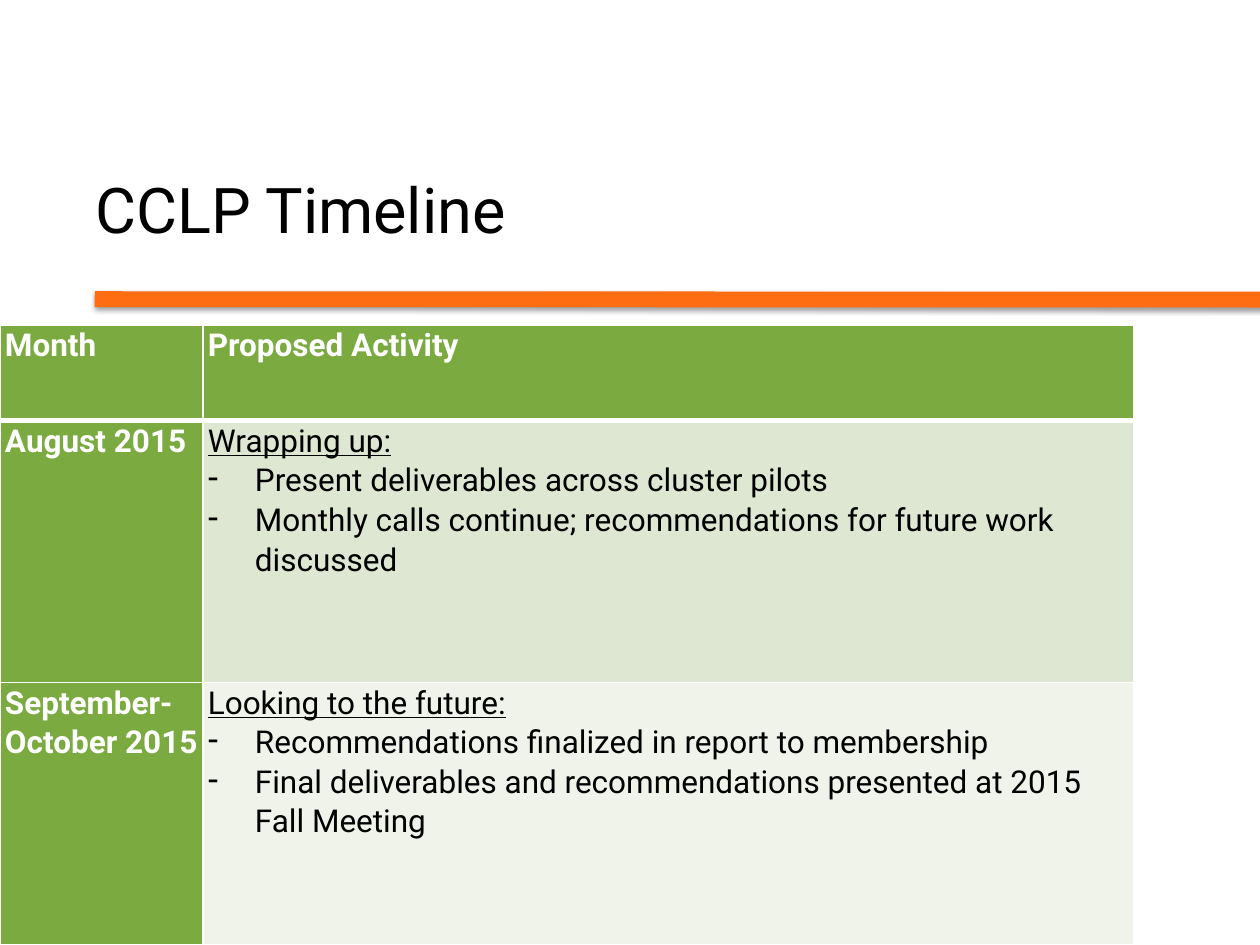
import pptx
import pptx.util
import pptx.dml.color
import pptx.enum.shapes
import pptx.enum.text
import pptx.oxml
import pptx.oxml.ns

Cm = pptx.util.Cm
Pt = pptx.util.Pt
NAMESPACE = pptx.oxml.ns.nsdecls("a")
GREEN, WHITE, BLACK, ORANGE = "7AAA40", "FFFFFF", "000000", "FF6D13"


def color(value):
    return pptx.dml.color.RGBColor.from_string(value)


def write_span(para, text, hex_color, **formats):
    span = para.add_run()
    span.text = text
    span.font.color.rgb = color(hex_color)
    for name, value in {"name": "Roboto", **formats}.items():
        setattr(span.font, name, value)


deck = pptx.Presentation()
deck.slide_width, deck.slide_height = Cm(25.4), Cm(19.05)
page = deck.slides.add_slide(deck.slide_layouts[6])

# Orange rule with a soft shadow
rule = page.shapes.add_connector(
    pptx.enum.shapes.MSO_CONNECTOR.STRAIGHT, Cm(1.91), Cm(6.03), Cm(25.65), Cm(6.04))
rule.line.color.rgb = color(ORANGE)
rule.line.width = Pt(9)
rule._element.spPr.append(pptx.oxml.parse_xml(
    f'<a:effectLst {NAMESPACE}><a:outerShdw blurRad="{Pt(3.1)}" dist="{Pt(1.6)}" '
    f'dir="5400000" rotWithShape="0"><a:srgbClr val="{BLACK}"><a:alpha val="38000"/>'
    '</a:srgbClr></a:outerShdw></a:effectLst>'))

# Title
title = page.shapes.add_textbox(Cm(1.68), Cm(2.67), Cm(17.09), Cm(3.18)).text_frame
title.word_wrap = True
title.vertical_anchor = pptx.enum.text.MSO_ANCHOR.MIDDLE
title.paragraphs[0].line_spacing = Pt(40)
write_span(title.paragraphs[0], "CCLP Timeline", BLACK, size=Pt(36))

# Timeline: month, activity heading, activity bullets, activity fill
timeline = [
    ("Month", "Proposed Activity", [], GREEN),
    ("August 2015", "Wrapping up:",
     ["Present deliverables across cluster pilots",
      "Monthly calls continue; recommendations for future work discussed"], "DEE7D1"),
    ("September-October 2015", "Looking to the future:",
     ["Recommendations finalized in report to membership",
      "Final deliverables and recommendations presented at 2015 Fall Meeting"], "EFF3EA"),
]
table = page.shapes.add_table(3, 2, Cm(0), Cm(6.55), Cm(22.86), Cm(12.5)).table
for column, width in zip(table.columns, (4.09, 18.77)):
    column.width = Cm(width)
for row, height in zip(table.rows, (1.93, 5.28, 5.28)):
    row.height = Cm(height)

cell_format = {"margin_left": Cm(0.1), "margin_right": Cm(0.1),
               "margin_top": 0, "margin_bottom": 0}
for row_index, (month, heading, bullets, activity_fill) in enumerate(timeline):
    for column_index, lines in enumerate(([month], [heading, *bullets])):
        cell = table.cell(row_index, column_index)
        for name, value in cell_format.items():
            setattr(cell, name, value)
        strong = row_index == 0 or column_index == 0

        # White borders, heavier between the header and the body
        for side in "LRTB":
            heavy = (row_index, side) in ((0, "B"), (1, "T"))
            cell._tc.get_or_add_tcPr().append(pptx.oxml.parse_xml(
                f'<a:ln{side} {NAMESPACE} w="{Pt(3 if heavy else 1)}"><a:solidFill>'
                f'<a:srgbClr val="{WHITE}"/></a:solidFill></a:ln{side}>'))
        cell.fill.solid()
        cell.fill.fore_color.rgb = color(GREEN if strong else activity_fill)

        # Heading line first, then dash bullets
        for line_index, line in enumerate(lines):
            frame = cell.text_frame
            para = frame.add_paragraph() if line_index else frame.paragraphs[0]
            para.line_spacing = 1.07
            if line_index:
                properties = para._p.get_or_add_pPr()
                properties.set("marL", str(Cm(0.95)))
                properties.set("indent", str(-Cm(0.95)))
                properties.append(pptx.oxml.parse_xml(f'<a:buChar {NAMESPACE} char="-"/>'))
            write_span(para, line, WHITE if strong else BLACK, size=Pt(18), bold=strong,
                       underline=not strong and line_index == 0)

deck.save("out.pptx")
